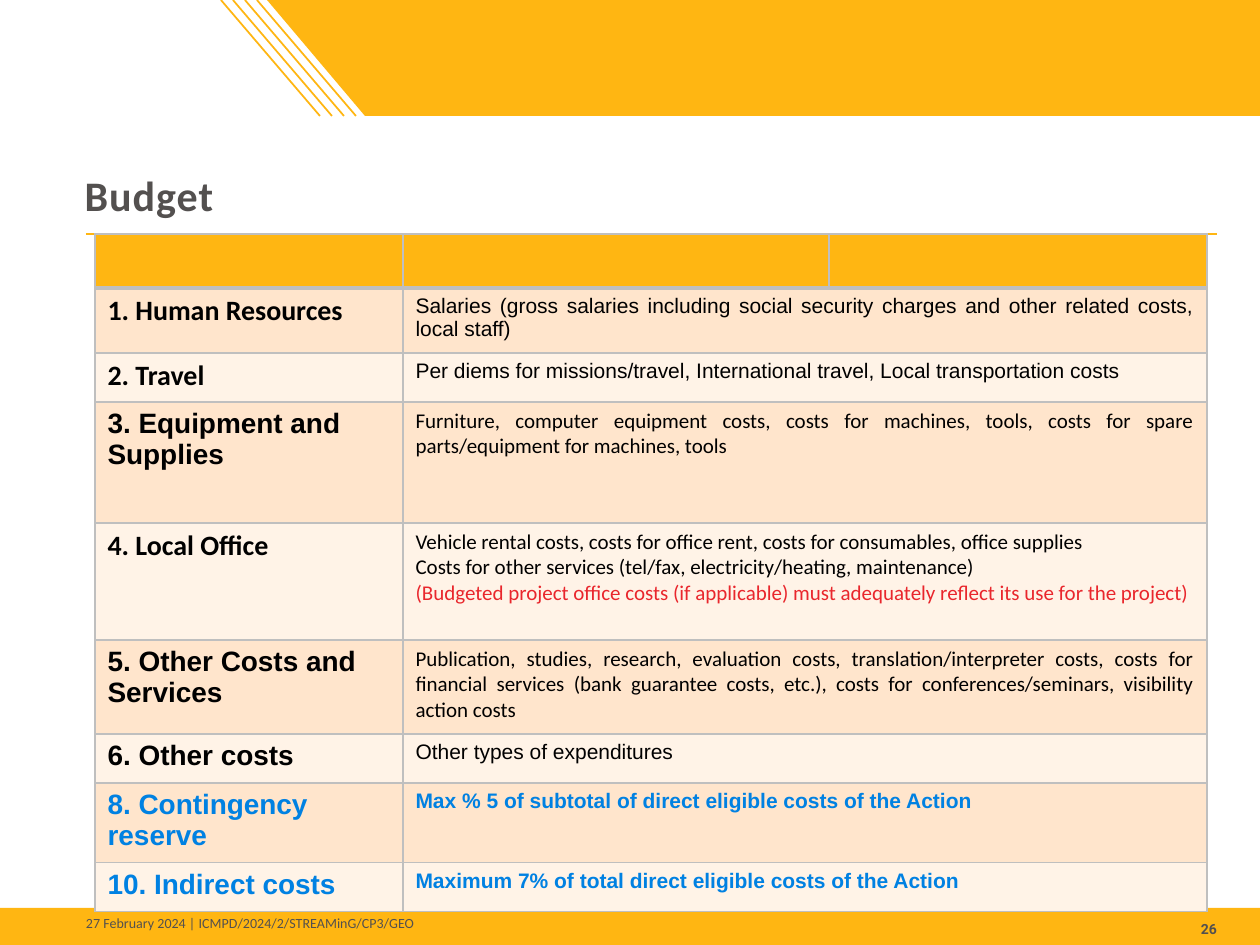
from lxml.etree import SubElement
from pptx import Presentation
from pptx.dml.color import RGBColor
from pptx.enum.shapes import MSO_CONNECTOR, MSO_SHAPE
from pptx.enum.text import MSO_ANCHOR, PP_ALIGN
from pptx.oxml import parse_xml
from pptx.oxml.ns import nsdecls, qn
from pptx.util import Pt

PX = 914400 // 126
AMBER, GRAY, BLACK = "FFB612", "53504F", "000000"
RED, BLUE, BORDER = "E9262C", "0081E2", "BFBFBF"
BANDS = ["FFE5CC", "FFF3E7"]

COLUMN_WIDTHS = [308, 426, 378]
HEADER_HEIGHT = 54
# height, heading, heading font, detail lines, detail font, colour, bold detail
BUDGET = [
    (65, "1. Human Resources", "Calibri",
     ["Salaries (gross salaries including social security charges and other "
      "related costs, local staff)"], "Arial", BLACK, False),
    (49, "2. Travel", "Calibri",
     ["Per diems for missions/travel, International travel, Local "
      "transportation costs"], "Arial", BLACK, False),
    (121, "3. Equipment and Supplies", "Arial",
     ["Furniture, computer equipment costs, costs for machines, tools, costs "
      "for spare parts/equipment for machines, tools"], "Calibri", BLACK, False),
    (117, "4. Local Office", "Calibri",
     ["Vehicle rental costs, costs for office rent, costs for consumables, "
      "office supplies",
      "Costs for other services (tel/fax, electricity/heating, maintenance)",
      "(Budgeted project office costs (if applicable) must adequately reflect "
      "its use for the project)"], "Calibri", BLACK, False),
    (94, "5. Other Costs and Services", "Arial",
     ["Publication, studies, research, evaluation costs, translation/interpreter "
      "costs, costs for financial services (bank guarantee costs, etc.), costs "
      "for conferences/seminars, visibility action costs"],
     "Calibri", BLACK, False),
    (49, "6. Other costs", "Arial",
     ["Other types of expenditures"], "Arial", BLACK, False),
    (49, "8. Contingency reserve", "Arial",
     ["Max % 5 of subtotal of direct eligible costs of the Action"],
     "Arial", BLUE, True),
    (49, "10. Indirect costs", "Arial",
     ["Maximum 7% of total direct eligible costs of the Action"],
     "Arial", BLUE, True),
]


def px(*lengths):
    return [length * PX for length in lengths]


def paint(color_format, color):
    color_format.rgb = RGBColor.from_string(color)


def fill_with(target, color):
    target.fill.solid()
    paint(target.fill.fore_color, color)


def format_runs(paragraph, size, font, color, bold=False, align=PP_ALIGN.LEFT):
    paragraph.alignment = align
    for run in paragraph.runs:
        run.font.size, run.font.name, run.font.bold = Pt(size), font, bold
        paint(run.font.color, color)


def add_line(slide, start, end, width):
    line = slide.shapes.add_connector(MSO_CONNECTOR.STRAIGHT, *px(*start, *end))
    line.line.width = Pt(width)
    paint(line.line.color, AMBER)
    SubElement(line._element.spPr, qn("a:effectLst"))


def add_label(slide, box, text, **style):
    frame = slide.shapes.add_textbox(*px(*box)).text_frame
    frame.margin_left = frame.margin_right = 0
    frame.margin_top = frame.margin_bottom = 0
    frame.text = text
    format_runs(frame.paragraphs[0], 8, color=GRAY, **style)
    return frame


def add_banner(slide):
    outline = slide.shapes.build_freeform(267, 0, scale=PX)
    outline.add_line_segments([(1260, 0), (1260, 116), (365, 116)], close=True)
    banner = outline.convert_to_shape()
    footer = slide.shapes.add_shape(MSO_SHAPE.RECTANGLE, *px(0, 908, 1260, 39))
    for block in (banner, footer):
        fill_with(block, AMBER)
        block.line.fill.background()
        block.shadow.inherit = False
    for x in range(221, 258, 12):
        add_line(slide, (x, 0), (x + 99, 116), 1)
    add_line(slide, (86, 234), (1217, 234), 1.5)


def set_title(slide, text):
    title = slide.shapes.title
    title.left, title.top, title.width, title.height = px(72, 121, 1153, 105)
    title.text_frame.text = text
    title.text_frame.vertical_anchor = MSO_ANCHOR.BOTTOM
    heading = title.text_frame.paragraphs[0]
    format_runs(heading, 24, "Calibri", GRAY, bold=True)
    heading.runs[0].font._element.set("spc", "60")


def set_borders(cell, top=1, bottom=1):
    properties = cell._tc.get_or_add_tcPr()
    sides = {"lnL": 1, "lnR": 1, "lnT": top, "lnB": bottom}
    for position, (side, width) in enumerate(sides.items()):
        properties.insert(position, parse_xml(
            f'<a:{side} {nsdecls("a")} w="{Pt(width)}"><a:solidFill>'
            f'<a:srgbClr val="{BORDER}"/></a:solidFill></a:{side}>'))


def add_budget_table(slide):
    heights = [HEADER_HEIGHT] + [entry[0] for entry in BUDGET]
    table = slide.shapes.add_table(
        len(heights), len(COLUMN_WIDTHS),
        *px(95, 234, sum(COLUMN_WIDTHS), sum(heights))).table
    table.first_row = table.horz_banding = False
    for column, width in zip(table.columns, px(*COLUMN_WIDTHS)):
        column.width = width
    for index, (row, height) in enumerate(zip(table.rows, px(*heights))):
        row.height = height
        for cell in row.cells:
            fill_with(cell, BANDS[(index - 1) % 2] if index else AMBER)
            set_borders(cell, top=3 if index == 1 else 1,
                        bottom=1 if index else 3)

    for index, entry in enumerate(BUDGET, start=1):
        _, heading, heading_font, details, detail_font, color, bold = entry
        heading_cell, detail_cell = table.cell(index, 0), table.cell(index, 1)
        detail_cell.merge(table.cell(index, 2))
        heading_cell.text_frame.text = heading
        format_runs(heading_cell.text_frame.paragraphs[0], 16, heading_font,
                    color, bold=True)
        detail_cell.text_frame.text = "\n".join(details)
        for paragraph in detail_cell.text_frame.paragraphs:
            note_color = RED if paragraph.text.startswith("(") else color
            format_runs(paragraph, 12, detail_font, note_color, bold,
                        PP_ALIGN.JUSTIFY)


def main():
    presentation = Presentation()
    presentation.slide_width, presentation.slide_height = px(1260, 945)
    slide = presentation.slides.add_slide(presentation.slide_layouts[5])
    add_banner(slide)
    page_number = add_label(slide, (1134, 921, 83, 16), "26", font="Roboto",
                            bold=True, align=PP_ALIGN.RIGHT)
    page_number.vertical_anchor = MSO_ANCHOR.MIDDLE
    page_number.word_wrap = True
    add_label(slide, (86, 915, 544, 26),
              "27 February 2024 | ICMPD/2024/2/STREAMinG/CP3/GEO", font="Calibri")
    set_title(slide, "Budget")
    add_budget_table(slide)
    presentation.save("out.pptx")


if __name__ == "__main__":
    main()
